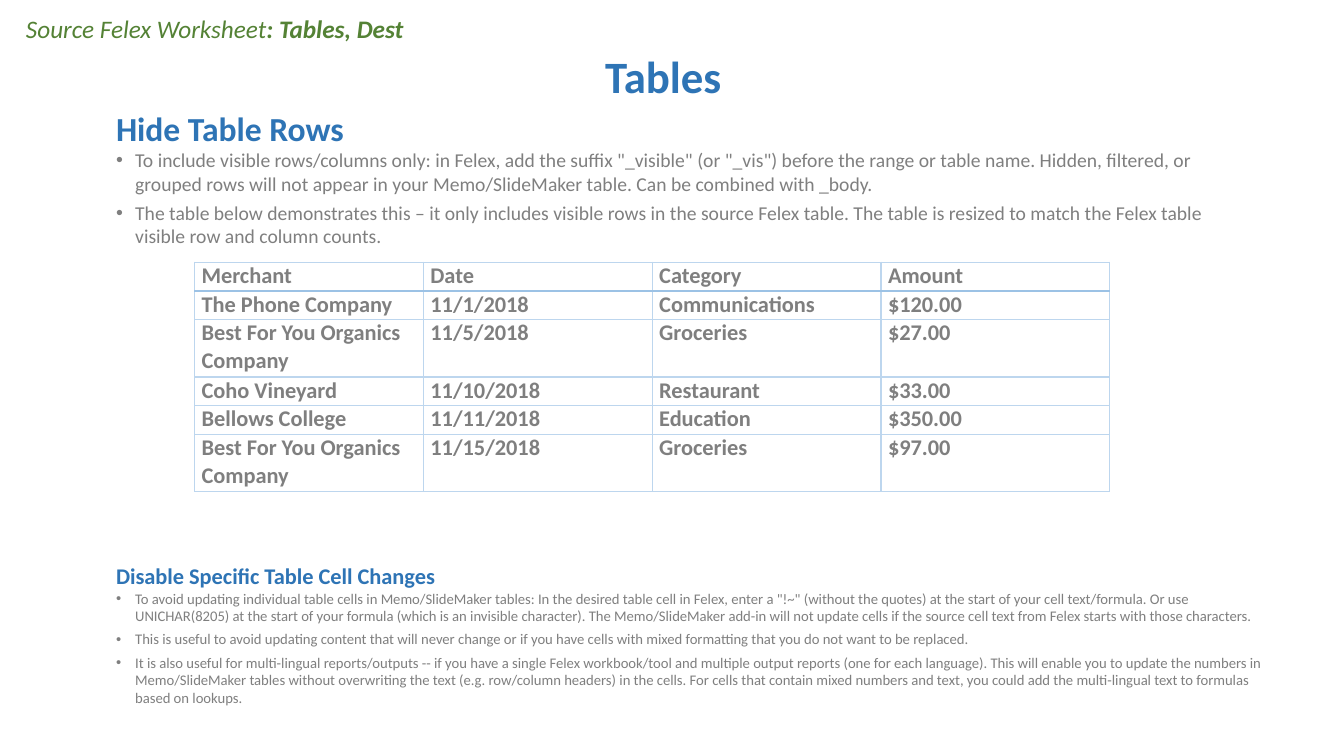
from lxml import etree
from pptx import Presentation
from pptx import util as u
from pptx.dml.color import RGBColor
from pptx.enum import text
from pptx.oxml.ns import qn

FONT, BLUE, GRAY, GREEN = "Calibri", "2E74B5", "7F7F7F", "548235"
PALE_RULE, HEADER_RULE = ("BDD6EE", 1), ("9CC2E5", 1.5)
TITLE = "Tables"
SOURCE = [("Source Felex Worksheet", False), (": Tables, Dest", True)]

SECTIONS = [
    {"area": (7.88, 13.6, 86.4, 20), "heading": "Hide Table Rows", "sizes": (24, 14), "bullets": [
        'To include visible rows/columns only: in Felex, add the suffix "_visible" (or "_vis") before the range '
        "or table name. Hidden, filtered, or grouped rows will not appear in your Memo/SlideMaker table. "
        "Can be combined with _body.",
        "The table below demonstrates this – it only includes visible rows in the source Felex table. "
        "The table is resized to match the Felex table visible row and column counts.",
    ]},
    {"area": (7.88, 73.73, 87.22, 20.53), "heading": "Disable Specific Table Cell Changes",
     "sizes": (16, 10.5), "bullets": [
        "To avoid updating individual table cells in Memo/SlideMaker tables: In the desired table cell in Felex, "
        'enter a "!~" (without the quotes) at the start of your cell text/formula. Or use UNICHAR(8205) at the '
        "start of your formula (which is an invisible character). The Memo/SlideMaker add-in will not update "
        "cells if the source cell text from Felex starts with those characters.",
        "This is useful to avoid updating content that will never change or if you have cells with mixed "
        "formatting that you do not want to be replaced.",
        "It is also useful for multi-lingual reports/outputs -- if you have a single Felex workbook/tool and "
        "multiple output reports (one for each language). This will enable you to update the numbers in "
        "Memo/SlideMaker tables without overwriting the text (e.g. row/column headers) in the cells. For cells "
        "that contain mixed numbers and text, you could add the multi-lingual text to formulas based on lookups.",
    ]},
]

EXPENSES = [
    ("Merchant", "Date", "Category", "Amount"),
    ("The Phone Company", "11/1/2018", "Communications", "$120.00"),
    ("Best For You Organics Company", "11/5/2018", "Groceries", "$27.00"),
    ("Coho Vineyard", "11/10/2018", "Restaurant", "$33.00"),
    ("Bellows College", "11/11/2018", "Education", "$350.00"),
    ("Best For You Organics Company", "11/15/2018", "Groceries", "$97.00"),
]
ROW_LINES = (1, 1, 2, 1, 1, 2)

deck = Presentation()
deck.slide_width, deck.slide_height = u.Inches(13.333), u.Inches(7.5)


def color(hex_value):
    return RGBColor.from_string(hex_value)


def share(left, top, width, height):
    wide, high = deck.slide_width / 100, deck.slide_height / 100
    return int(left * wide), int(top * high), int(width * wide), int(height * high)


def place(box, area):
    box.left, box.top, box.width, box.height = share(*area)


def set_frame(frame, wrap=True):
    frame.word_wrap = wrap
    frame.auto_size = text.MSO_AUTO_SIZE.SHAPE_TO_FIT_TEXT
    frame.vertical_anchor = text.MSO_ANCHOR.TOP


def add_span(para, words, size, hex_value, bold=False, italic=False):
    span = para.add_run()
    span.text = words
    font = span.font
    font.name, font.size, font.bold, font.italic = FONT, u.Pt(size), bold, italic
    font.color.rgb = color(hex_value)


def set_spacing(para, before=0, after=0):
    para.space_before, para.space_after = u.Pt(before), u.Pt(after)


def set_bullet(para, mark=None):
    props = para._p.get_or_add_pPr()
    indent = u.Inches(0.19) if mark else 0
    props.set("marL", str(indent))
    props.set("indent", str(-indent))
    if mark:
        etree.SubElement(props, qn("a:buFont")).set("typeface", "Arial")
        etree.SubElement(props, qn("a:buChar")).set("char", mark)
    else:
        etree.SubElement(props, qn("a:buNone"))


def fill_section(box, section):
    place(box, section["area"])
    frame = box.text_frame
    set_frame(frame)
    heading_size, bullet_size = section["sizes"]
    para = frame.paragraphs[0]
    set_spacing(para, before=2)
    set_bullet(para)
    add_span(para, section["heading"], heading_size, BLUE, bold=True)
    for words in section["bullets"]:
        para = frame.add_paragraph()
        set_spacing(para, after=4)
        set_bullet(para, "•")
        add_span(para, words, bullet_size, GRAY)


def set_borders(cell, row):
    rules = {"lnL": PALE_RULE, "lnR": PALE_RULE,
             "lnT": HEADER_RULE if row == 1 else PALE_RULE,
             "lnB": HEADER_RULE if row == 0 else PALE_RULE}
    props = cell._tc.get_or_add_tcPr()
    for position, (side, (hex_value, width)) in enumerate(rules.items()):
        line = etree.Element(qn("a:" + side), w=str(u.Pt(width)))
        fill = etree.SubElement(line, qn("a:solidFill"))
        etree.SubElement(fill, qn("a:srgbClr")).set("val", hex_value)
        props.insert(position, line)


def add_expenses(page):
    area = share(14.48, 34.67, 68.1, 30.4)
    table = page.shapes.add_table(len(EXPENSES), len(EXPENSES[0]), *area).table
    table.first_row = table.horz_banding = False
    for column in table.columns:
        column.width = area[2] // len(EXPENSES[0])
    for row, values in enumerate(EXPENSES):
        table.rows[row].height = area[3] * ROW_LINES[row] // sum(ROW_LINES)
        for column, words in enumerate(values):
            cell = table.cell(row, column)
            cell.margin_left = cell.margin_right = u.Inches(0.07)
            cell.margin_top = cell.margin_bottom = 0
            cell.fill.background()
            set_borders(cell, row)
            para = cell.text_frame.paragraphs[0]
            set_spacing(para, after=4)
            add_span(para, words, 16, GRAY, bold=True)


def main():
    page = deck.slides.add_slide(deck.slide_layouts[3])
    title, *bodies = page.placeholders
    place(title, (44.1, 5.73, 10.5, 8.53))
    set_frame(title.text_frame, wrap=False)
    para = title.text_frame.paragraphs[0]
    para.alignment = text.PP_ALIGN.CENTER
    add_span(para, TITLE, 32, BLUE, bold=True)

    for box, section in zip(bodies, SECTIONS):
        fill_section(box, section)
    add_expenses(page)

    label = page.shapes.add_textbox(*share(1.2, 1.07, 58.2, 5.33))
    set_frame(label.text_frame)
    para = label.text_frame.paragraphs[0]
    set_spacing(para, after=4)
    for words, bold in SOURCE:
        add_span(para, words, 18, GREEN, bold=bold, italic=True)
    deck.save("out.pptx")


if __name__ == "__main__":
    main()
